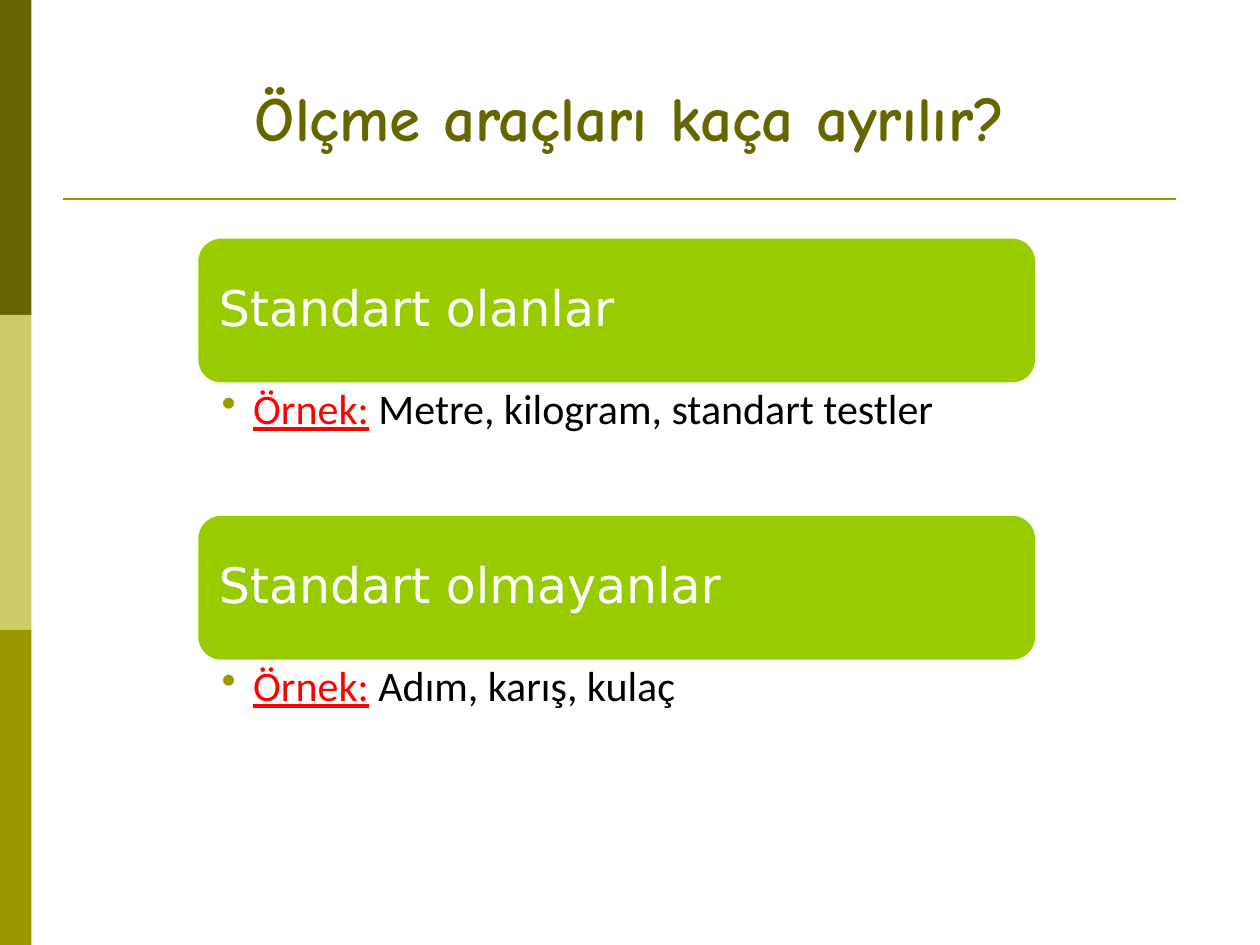
"""Build the slide on the two kinds of measuring tools."""
from dataclasses import dataclass

from lxml import etree
from pptx import Presentation
from pptx import util as u
from pptx.dml.color import RGBColor
from pptx.enum import shapes, text
from pptx.oxml.ns import qn

HUES = {
    "dark": "666600", "pale": "CCCC66", "olive": "999900", "lime": "99CC00",
    "red": "FF0000", "black": "000000", "white": "FFFFFF",
}
LEFT, TOP, WIDTH = 1.56, 1.88, 6.67
HEAD, BODY = 1.17, 1.03
BAND = 2.5


@dataclass
class Group:
    name: str
    items: str


GROUPS = [
    Group("Standart olanlar", " Metre, kilogram, standart testler"),
    Group("Standart olmayanlar", " Adım, karış, kulaç"),
]


def hue(name: str) -> RGBColor:
    """Return the named colour."""
    return RGBColor.from_string(HUES[name])


def add_run(para, words: str, face: str, size: int, tint: str,
            bold: bool = False, under: bool = False) -> None:
    """Append one styled run to a paragraph."""
    run = para.add_run()
    run.text = words
    font = run.font
    font.name, font.size = face, u.Pt(size)
    font.bold, font.underline = bold, under
    font.color.rgb = hue(tint)


def set_frame(frame, side: float, edge: float, anchor) -> None:
    """Set the wrap, margins and anchor of a text frame."""
    frame.word_wrap = True
    frame.margin_left = frame.margin_right = u.Inches(side)
    frame.margin_top = frame.margin_bottom = u.Inches(edge)
    frame.vertical_anchor = anchor


def add_block(slide, kind, box: tuple, tint: str):
    """Draw a filled shape without outline or shadow."""
    block = slide.shapes.add_shape(kind, *map(u.Inches, box))
    block.shadow.inherit = False
    block.fill.solid()
    block.fill.fore_color.rgb = hue(tint)
    block.line.fill.background()
    return block


def add_rule(slide) -> None:
    """Draw the line below the title."""
    ends = map(u.Inches, (0.5, 1.58, 9.33, 1.58))
    rule = slide.shapes.add_connector(shapes.MSO_CONNECTOR.STRAIGHT, *ends)
    rule.line.color.rgb = hue("olive")
    rule.line.width = u.Pt(1.5)
    etree.SubElement(rule._element.spPr, qn("a:effectLst"))


def add_title(slide, words: str) -> None:
    """Write the centred title."""
    box = slide.shapes.add_textbox(*map(u.Inches, (0.5, 0.3, 9, 1.25)))
    set_frame(box.text_frame, 0.1, 0.05, text.MSO_ANCHOR.MIDDLE)
    para = box.text_frame.paragraphs[0]
    para.alignment = text.PP_ALIGN.CENTER
    add_run(para, words, "Comic Neue", 36, "dark", bold=True)


def set_bullet(para, tint: str) -> None:
    """Give a paragraph a coloured bullet with a hanging indent."""
    props = para._p.get_or_add_pPr()
    props.set("marL", str(u.Inches(0.25)))
    props.set("indent", str(-u.Inches(0.25)))
    shade = etree.SubElement(props, qn("a:buClr"))
    etree.SubElement(shade, qn("a:srgbClr"), val=HUES[tint])
    etree.SubElement(props, qn("a:buChar"), char="•")


def add_group(slide, group: Group, top: float) -> None:
    """Draw a heading bar with its example below."""
    bar = add_block(slide, shapes.MSO_SHAPE.ROUNDED_RECTANGLE,
                    (LEFT, top, WIDTH, HEAD), "lime")
    bar.line.color.rgb = hue("white")
    bar.line.width = u.Pt(2)
    set_frame(bar.text_frame, 0.12, 0.12, text.MSO_ANCHOR.MIDDLE)
    para = bar.text_frame.paragraphs[0]
    para.alignment = text.PP_ALIGN.LEFT
    para.line_spacing = 0.9
    add_run(para, group.name, "DejaVu Sans", 28, "white")

    area = map(u.Inches, (LEFT, top + HEAD, WIDTH, BODY))
    note = slide.shapes.add_textbox(*area)
    set_frame(note.text_frame, 0.2, 0.03, text.MSO_ANCHOR.TOP)
    para = note.text_frame.paragraphs[0]
    para.line_spacing = 0.9
    set_bullet(para, "olive")
    add_run(para, "Örnek:", "Calibri", 24, "red", under=True)
    add_run(para, group.items, "Calibri", 24, "black")


def main() -> None:
    """Build and save the slide."""
    deck = Presentation()
    deck.slide_width, deck.slide_height = u.Inches(10), u.Inches(7.5)
    slide = deck.slides.add_slide(deck.slide_layouts[6])
    for row, tint in enumerate(("dark", "pale", "olive")):
        add_block(slide, shapes.MSO_SHAPE.RECTANGLE,
                  (0, row * BAND, 0.25, BAND), tint)
    add_rule(slide)
    add_title(slide, "Ölçme araçları kaça ayrılır?")
    for row, group in enumerate(GROUPS):
        add_group(slide, group, TOP + row * (HEAD + BODY))
    deck.save("out.pptx")


if __name__ == "__main__":
    main()
